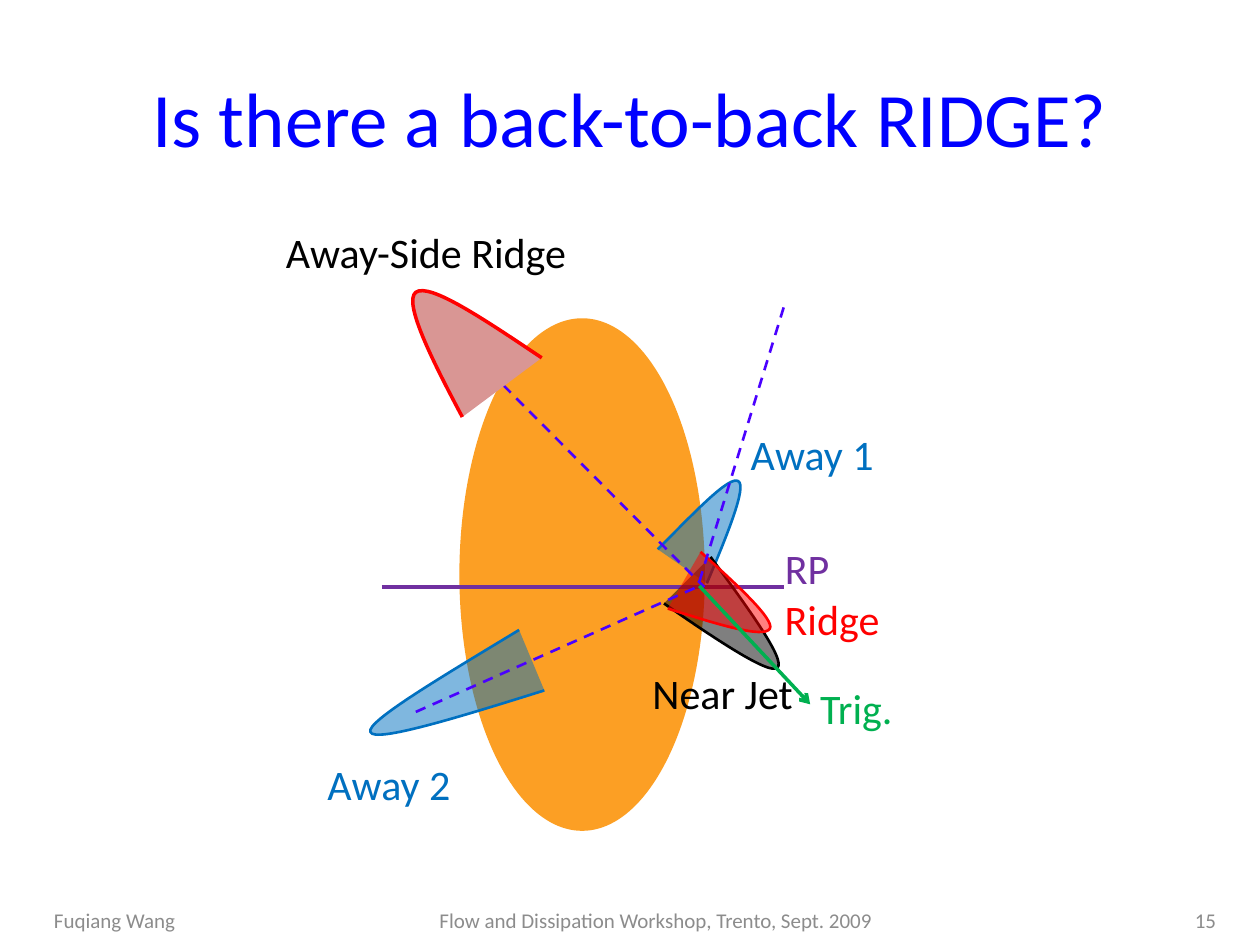
from lxml import etree
from pptx import Presentation
from pptx import util as u
from pptx.dml.color import RGBColor
from pptx.enum import dml, shapes, text
from pptx.oxml.ns import qn

BLUE = RGBColor(0x00, 0x00, 0xFF)
ORANGE = RGBColor(0xFC, 0x9F, 0x24)
AWAY_BLUE = RGBColor(0x00, 0x70, 0xC0)
PURPLE = RGBColor(0x70, 0x30, 0xA0)
VIOLET = RGBColor(0x4A, 0x01, 0xFF)
GREEN = RGBColor(0x00, 0xB0, 0x50)
RED = RGBColor(0xFF, 0x00, 0x00)
PINK = RGBColor(0xD9, 0x96, 0x94)
BLACK = RGBColor(0x00, 0x00, 0x00)
GREY = RGBColor(0x8C, 0x8C, 0x8C)


class Sketch:
    """Style and current slide, with one method per kind of element."""

    font = "Calibri"

    def __init__(self, slide):
        self.slide = slide
        self.diagram = slide.shapes.add_group_shape().shapes

    def add_words(self, frame, words, size, color, align):
        paragraph = frame.paragraphs[0]
        paragraph.alignment = align
        run = paragraph.add_run()
        run.text = words
        run.font.name = self.font
        run.font.size = u.Pt(size)
        run.font.color.rgb = color

    def paint(self, shape, fill, line, width, alpha=None):
        shape.shadow.inherit = False
        shape.fill.solid()
        shape.fill.fore_color.rgb = fill
        if alpha:
            color = shape._element.spPr.find(qn("a:solidFill"))[0]
            etree.SubElement(color, qn("a:alpha"), val=str(alpha * 1000))
        shape.line.color.rgb = line
        shape.line.width = u.Pt(width)

    def title(self, words, box):
        title = self.slide.shapes.title
        title.left, title.top, title.width, title.height = map(u.Inches, box)
        title.text_frame.vertical_anchor = text.MSO_ANCHOR.MIDDLE
        self.add_words(title.text_frame, words, 44, BLUE, text.PP_ALIGN.CENTER)

    def label(self, words, box, color):
        frame = self.diagram.add_textbox(*map(u.Inches, box)).text_frame
        frame.word_wrap = False
        frame.auto_size = text.MSO_AUTO_SIZE.SHAPE_TO_FIT_TEXT
        self.add_words(frame, words, 24, color, text.PP_ALIGN.LEFT)

    def footer(self, words, left, width, align):
        box = map(u.Inches, (left, 7.1, width, 0.4))
        frame = self.slide.shapes.add_textbox(*box).text_frame
        frame.word_wrap = True
        frame.vertical_anchor = text.MSO_ANCHOR.MIDDLE
        self.add_words(frame, words, 12, GREY, align)

    def ellipse(self, box, color):
        oval = self.diagram.add_shape(shapes.MSO_SHAPE.OVAL, *map(u.Inches, box))
        self.paint(oval, color, color, 2)

    def cone(self, points, fill, line, width=1.5, alpha=50):
        """Open cone: a start point, then two Bezier curves of three points each."""
        start, *rest = [(u.Inches(x), u.Inches(y)) for x, y in points]
        builder = self.diagram.build_freeform(*start)
        builder.add_line_segments(rest, close=False)
        cone = builder.convert_to_shape()
        # Turn each three straight segments into one cubic curve
        outline = cone._element.find(".//" + qn("a:path"))
        segments = outline.findall(qn("a:lnTo"))
        for first in range(0, len(segments), 3):
            curve = etree.SubElement(outline, qn("a:cubicBezTo"))
            for segment in segments[first:first + 3]:
                curve.append(segment[0])
                outline.remove(segment)
        self.paint(cone, fill, line, width, alpha)

    def line(self, start, end, color, width, dashed=False, arrow=False):
        ends = map(u.Inches, (*start, *end))
        line = self.diagram.add_connector(shapes.MSO_CONNECTOR.STRAIGHT, *ends)
        line.line.color.rgb = color
        line.line.width = u.Pt(width)
        if dashed:
            line.line.dash_style = dml.MSO_LINE.DASH
        properties = line._element.spPr
        if arrow:
            etree.SubElement(properties.find(qn("a:ln")), qn("a:tailEnd"), type="arrow")
        etree.SubElement(properties, qn("a:effectLst"))


def main():
    prs = Presentation()
    prs.slide_width, prs.slide_height = u.Inches(10), u.Inches(7.5)
    sketch = Sketch(prs.slides.add_slide(prs.slide_layouts[5]))
    sketch.title("Is there a back-to-back RIDGE?", (0.5, 0.3, 9, 1.25))

    # Collision zone and away-side jets
    sketch.ellipse((3.66, 2.54, 1.92, 4.04), ORANGE)
    away_2 = [(4.32, 5.48), (3.65, 5.69), (2.97, 5.9), (2.94, 5.81),
              (2.9, 5.73), (3.51, 5.37), (4.12, 5)]
    away_1 = [(5.22, 4.36), (5.51, 4.07), (5.79, 3.77), (5.86, 3.82),
              (5.93, 3.86), (5.77, 4.25), (5.61, 4.63)]
    for jet in (away_2, away_1):
        sketch.cone(jet, AWAY_BLUE, AWAY_BLUE)

    # Reaction plane, near jet and ridge
    sketch.line((3.03, 4.66), (6.22, 4.66), PURPLE, 2)
    near_jet = [(5.64, 4.42), (5.94, 4.83), (6.24, 5.24), (6.17, 5.3),
                (6.11, 5.36), (5.69, 5.08), (5.27, 4.79)]
    ridge = [(5.56, 4.38), (5.86, 4.65), (6.15, 4.92), (6.11, 4.99),
             (6.06, 5.07), (5.68, 4.95), (5.3, 4.83)]
    sketch.cone(near_jet, BLACK, BLACK)
    sketch.cone(ridge, RED, RED)

    # Jet axes
    for start, end in (((3.48, 2.54), (5.59, 4.66)),
                       ((3.3, 5.65), (5.53, 4.66)),
                       ((6.22, 2.44), (5.54, 4.65))):
        sketch.line(start, end, VIOLET, 1.5, dashed=True)

    # Trigger direction
    sketch.line((5.55, 4.65), (6.43, 5.59), GREEN, 2, arrow=True)

    # Away-side ridge, covering the end of its axis
    away_ridge = [(3.67, 3.31), (3.43, 2.86), (3.2, 2.4), (3.3, 2.32),
                  (3.41, 2.24), (3.85, 2.54), (4.3, 2.84)]
    sketch.cone(away_ridge, PINK, RED, width=2, alpha=None)

    # Labels
    for words, box, color in (
        ("RP", (6.13, 4.26, 0.89, 0.56), PURPLE),
        ("Trig.", (6.41, 5.37, 1.25, 0.56), GREEN),
        ("Ridge", (6.13, 4.66, 1.53, 0.56), RED),
        ("Away 2", (2.5, 5.97, 1.89, 0.56), AWAY_BLUE),
        ("Away 1", (5.86, 3.35, 1.89, 0.56), AWAY_BLUE),
        ("Near Jet", (5.08, 5.25, 1.33, 0.5), BLACK),
        ("Away-Side Ridge", (2.17, 1.75, 2.5, 0.5), BLACK),
    ):
        sketch.label(words, box, color)

    # Footer
    sketch.footer("15", 8.17, 1.58, text.PP_ALIGN.RIGHT)
    sketch.footer("Flow and Dissipation Workshop, Trento, Sept. 2009",
                  3.33, 3.75, text.PP_ALIGN.CENTER)
    sketch.footer("Fuqiang Wang", 0.33, 1.42, text.PP_ALIGN.LEFT)

    prs.save("out.pptx")


if __name__ == "__main__":
    main()
